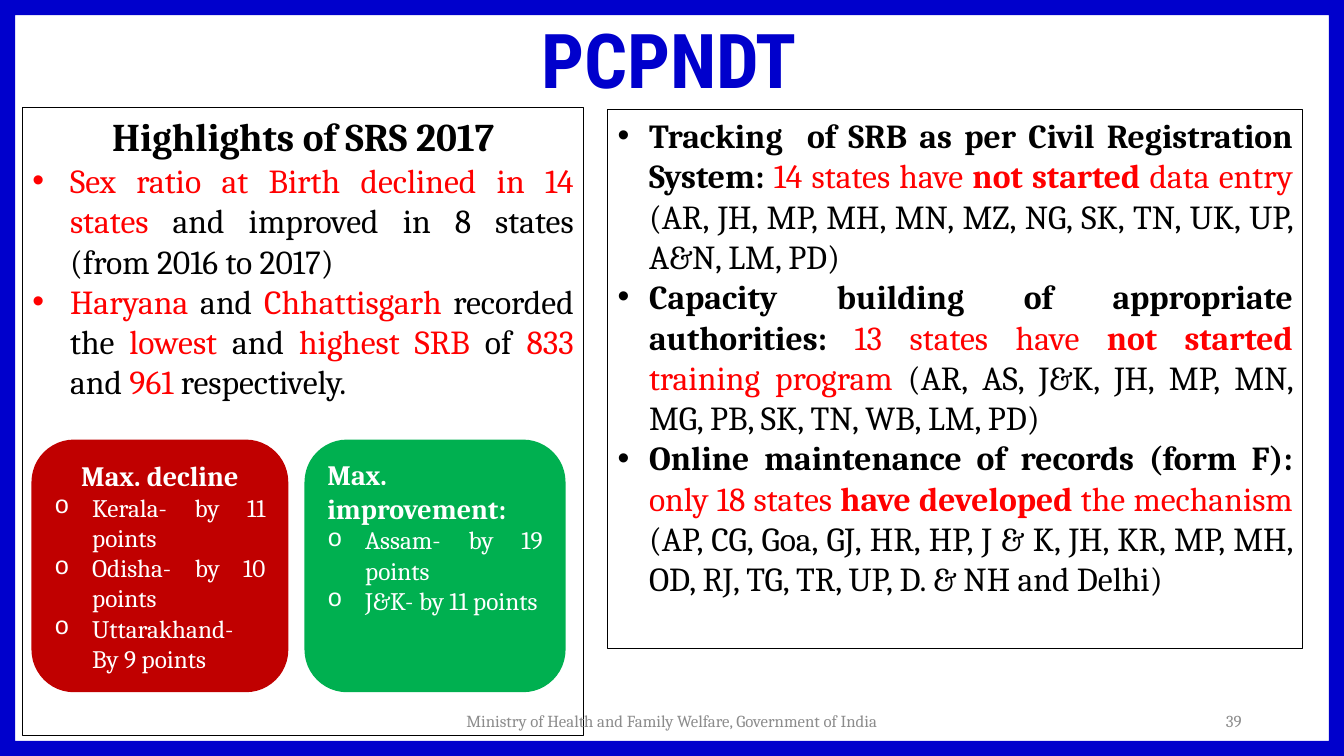
from lxml import etree
from pptx import Presentation
from pptx.dml.color import RGBColor
from pptx.enum.shapes import MSO_SHAPE
from pptx.enum.text import MSO_ANCHOR, PP_ALIGN
from pptx.oxml.ns import qn
from pptx.util import Pt

BLUE = RGBColor(0x00, 0x00, 0xCC)
BLACK = RGBColor(0x00, 0x00, 0x00)
RED = RGBColor(0xFF, 0x00, 0x00)
DARK_RED = RGBColor(0xC0, 0x00, 0x00)
GREEN = RGBColor(0x00, 0xB0, 0x50)
WHITE = RGBColor(0xFF, 0xFF, 0xFF)
GRAY = RGBColor(0x8C, 0x8C, 0x8C)

FRAME, RECTANGLE, ROUNDED = MSO_SHAPE.FRAME, MSO_SHAPE.RECTANGLE, MSO_SHAPE.ROUNDED_RECTANGLE
TOP, MIDDLE = MSO_ANCHOR.TOP, MSO_ANCHOR.MIDDLE
LEFT, CENTER, RIGHT, JUSTIFY = PP_ALIGN.LEFT, PP_ALIGN.CENTER, PP_ALIGN.RIGHT, PP_ALIGN.JUSTIFY

WIDTH, HEIGHT = 960, 540
BODY_FONT, TITLE_FONT = "Cambria", "Roboto Condensed"

# Each run is (text, colour, bold)
SRS_POINTS = [
    [("Sex ratio at Birth declined in 14 states ", RED, False),
     ("and improved in 8 states (from 2016 to 2017)", BLACK, False)],
    [("Haryana", RED, False), (" and ", BLACK, False),
     ("Chhattisgarh", RED, False), (" recorded the ", BLACK, False),
     ("lowest", RED, False), (" and ", BLACK, False),
     ("highest SRB ", RED, False), ("of ", BLACK, False),
     ("833", RED, False), (" and ", BLACK, False),
     ("961", RED, False), (" respectively.", BLACK, False)],
]
# Each row is heading, count of states, stressed words, subject, list of states
STATUS_POINTS = [
    ("Tracking  of SRB as per Civil Registration System: ",
     "14 states have ", "not started ", "data entry ",
     "(AR, JH, MP, MH, MN, MZ, NG, SK, TN, UK, UP, A&N, LM, PD)"),
    ("Capacity building of appropriate authorities: ",
     "13 states have ", "not started ", "training program ",
     "(AR, AS, J&K, JH, MP, MN, MG, PB, SK, TN, WB, LM, PD)"),
    ("Online maintenance of records (form F): ",
     "only 18 states ", "have developed ", "the mechanism ",
     "(AP, CG, Goa, GJ, HR, HP, J & K, JH, KR, MP, MH, OD, RJ, TG, TR, UP, D. & NH and Delhi)"),
]
STATUS_STYLE = [(BLACK, True), (RED, False), (RED, True), (RED, False), (BLACK, False)]
DECLINES = ["Kerala- by 11 points", "Odisha- by 10 points", "Uttarakhand- By 9 points"]
IMPROVEMENTS = ["Assam- by 19 points ", "J&K- by 11 points"]


def set_bullet(paragraph, character, indent, font):
    properties = paragraph._p.get_or_add_pPr()
    properties.set("marL", str(Pt(indent)))
    properties.set("indent", str(-Pt(indent)))
    etree.SubElement(properties, qn("a:buFont")).set("typeface", font)
    etree.SubElement(properties, qn("a:buChar")).set("char", character)


def write(frame, content, size=24, color=BLACK, bold=False, align=LEFT, font=BODY_FONT,
          bullet=None, indent=27, bullet_font="Arial"):
    """Add a paragraph from a string or a list of (text, colour, bold) runs."""
    first = frame.paragraphs[0]
    paragraph = first if not first.runs else frame.add_paragraph()
    paragraph.alignment = align
    if bullet:
        set_bullet(paragraph, bullet, indent, bullet_font)
    runs = [(content, color, bold)] if isinstance(content, str) else content
    for text, run_color, run_bold in runs:
        run = paragraph.add_run()
        run.text = text
        run.font.name = font
        run.font.size = Pt(size)
        run.font.bold = run_bold
        run.font.color.rgb = run_color
    return paragraph


def add_box(slide, kind, box, fill=None, line=None, line_width=0.75, anchor=TOP):
    shape = slide.shapes.add_shape(kind, *map(Pt, box))
    shape.shadow.inherit = False
    if fill is None:
        shape.fill.background()
    else:
        shape.fill.solid()
        shape.fill.fore_color.rgb = fill
    if line is None:
        shape.line.fill.background()
    else:
        shape.line.color.rgb = line
        shape.line.width = Pt(line_width)
    shape.text_frame.word_wrap = True
    shape.text_frame.vertical_anchor = anchor
    return shape


def add_title(slide, box):
    title = slide.shapes.title
    title.left, title.top, title.width, title.height = map(Pt, box)
    title.text_frame.vertical_anchor = MIDDLE
    paragraph = write(title.text_frame, "PCPNDT", size=54, color=BLUE, bold=True,
                      align=CENTER, font=TITLE_FONT)
    paragraph.line_spacing = 0.9


def add_card(slide, box, heading, points, color, heading_align, anchor):
    card = add_box(slide, ROUNDED, box, fill=color, line=color, line_width=1, anchor=anchor)
    write(card.text_frame, heading, size=20, color=WHITE, bold=True, align=heading_align)
    for point in points:
        write(card.text_frame, point, size=18, color=WHITE, align=JUSTIFY,
              bullet="o", bullet_font="Courier New")


def add_srs_panel(slide, box):
    left, top, width, height = box
    panel = add_box(slide, RECTANGLE, box, line=BLACK)
    write(panel.text_frame, "Highlights of SRS 2017", size=28, bold=True, align=CENTER)
    for point in SRS_POINTS:
        write(panel.text_frame, point, align=JUSTIFY, bullet="•")
    # Cards for the largest changes
    card_top, card_height = top + 237.5, 179.5
    add_card(slide, (left + 7, card_top, 182.5, card_height), "Max. decline",
             DECLINES, DARK_RED, CENTER, MIDDLE)
    add_card(slide, (left + 202, card_top, 185.5, card_height), "Max. improvement:",
             IMPROVEMENTS, GREEN, LEFT, TOP)


def add_status_panel(slide, box):
    panel = add_box(slide, RECTANGLE, box, line=BLACK)
    for point in STATUS_POINTS:
        runs = [(text, *style) for text, style in zip(point, STATUS_STYLE)]
        write(panel.text_frame, runs, align=JUSTIFY, bullet="•", indent=22.5)


def add_footer(slide, box):
    left, top, width, height = box
    parts = [("Ministry of Health and Family Welfare, Government of India", left, 324, CENTER),
             ("39", left + width - 216, 216, RIGHT)]
    for text, part_left, part_width, align in parts:
        text_box = slide.shapes.add_textbox(Pt(part_left), Pt(top), Pt(part_width), Pt(height))
        text_box.text_frame.word_wrap = True
        text_box.text_frame.vertical_anchor = MIDDLE
        write(text_box.text_frame, text, size=12, color=GRAY, align=align)


def main():
    presentation = Presentation()
    presentation.slide_width, presentation.slide_height = Pt(WIDTH), Pt(HEIGHT)
    slide = presentation.slides.add_slide(presentation.slide_layouts[5])

    # Border around the slide
    border = add_box(slide, FRAME, (0, 0, WIDTH, HEIGHT), fill=BLUE)
    border.adjustments[0] = 0.02

    add_title(slide, (-2, 16, WIDTH, 59))
    add_srs_panel(slide, (16, 77, 401, 448.5))
    add_status_panel(slide, (434, 78.5, 496.5, 385))
    add_footer(slide, (318, 500.5, 576, 28.75))
    presentation.save("out.pptx")


if __name__ == "__main__":
    main()
